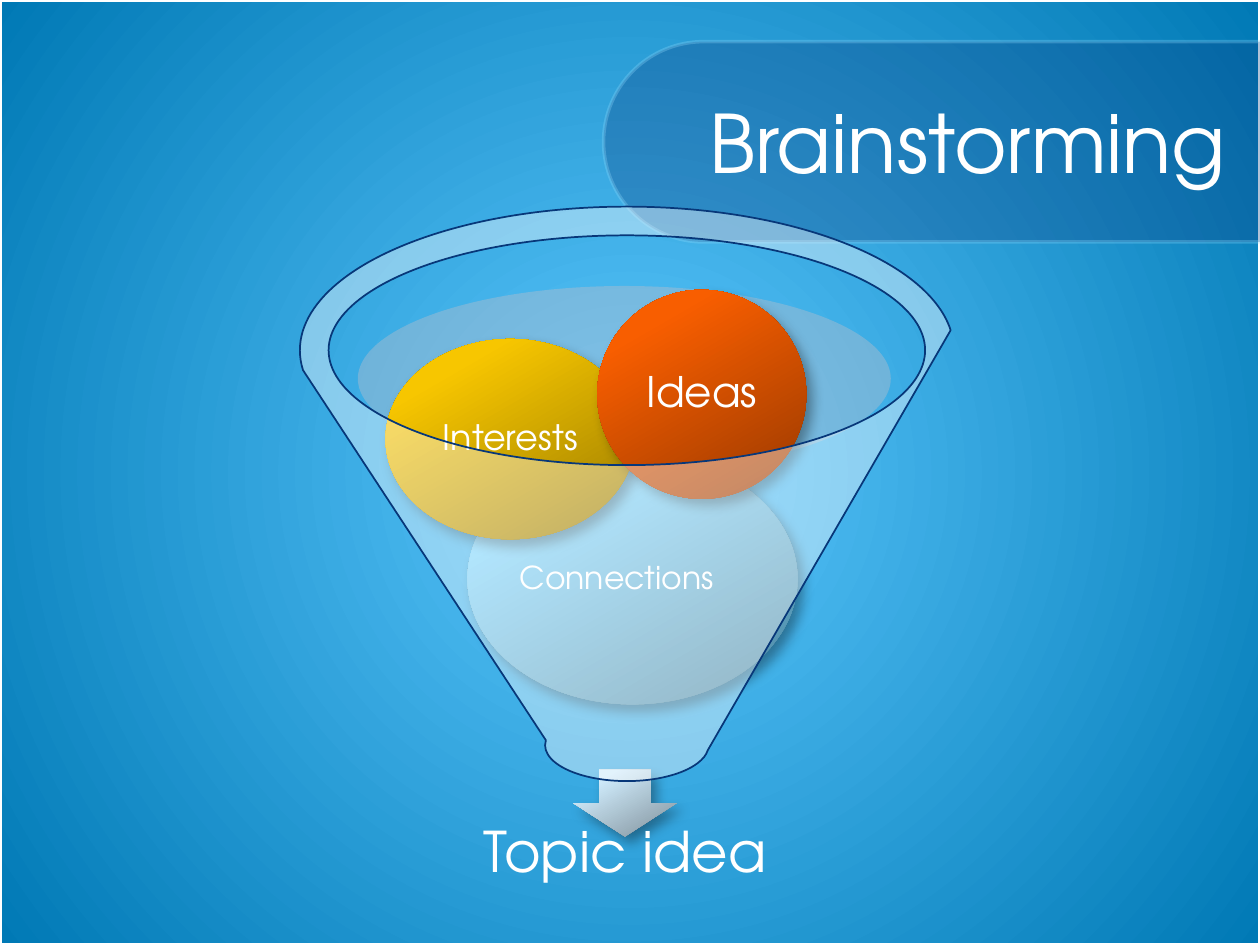
from lxml import etree
from pptx import Presentation
from pptx.dml.color import RGBColor
from pptx.enum import shapes, text
from pptx.oxml import parse_xml
from pptx.oxml.ns import nsdecls, qn
from pptx.util import Inches, Pt

FONT = "TeX Gyre Adventor"
WHITE = RGBColor(0xFF, 0xFF, 0xFF)
NAVY = RGBColor(0x07, 0x37, 0x79)
SKY = RGBColor(0x8F, 0xD9, 0xFB)
GREY = RGBColor(0xBD, 0xBF, 0xCB)
BLACK = RGBColor(0, 0, 0)
GLOW = [(0, RGBColor(0x5D, 0xC9, 0xFF)), (100, RGBColor(0x00, 0x79, 0xB5))]


def shaded(dark, bright, edge):
    return [(0, dark), (80, bright), (100, edge)]


SILVER = shaded(RGBColor(0x7F, 0x8F, 0x99), RGBColor(0xCF, 0xEB, 0xFB), RGBColor(0xCF, 0xEC, 0xFD))
BLUE = shaded(RGBColor(0x4B, 0x84, 0x9E), RGBColor(0x7F, 0xD7, 0xFF), RGBColor(0x81, 0xD7, 0xFF))
YELLOW = shaded(RGBColor(0x97, 0x79, 0x00), RGBColor(0xF7, 0xC6, 0x00), RGBColor(0xF8, 0xC7, 0x00))
ORANGE = shaded(RGBColor(0x98, 0x39, 0x00), RGBColor(0xF8, 0x5E, 0x00), RGBColor(0xF9, 0x5E, 0x00))

LEFT, CENTER, RIGHT = text.PP_ALIGN.LEFT, text.PP_ALIGN.CENTER, text.PP_ALIGN.RIGHT
# Balls from back to front: words, place within the funnel box, stops, text size, alignment
BALLS = [
    ("Connections", (1.33, 1.96, 2.62, 1.99), BLUE, 18, LEFT),
    ("Interests", (0.68, 1.05, 1.98, 1.59), YELLOW, 20, CENTER),
    ("Ideas", (2.36, 0.66, 1.66, 1.66), ORANGE, 24, CENTER),
]


def set_gradient(owner, stops, direction):
    """Swap the solid fill directly inside owner for a gradient."""
    marks = "".join(f'<a:gs pos="{pos * 1000}"><a:srgbClr val="{color}"/></a:gs>' for pos, color in stops)
    gradient = parse_xml(f'<a:gradFill {nsdecls("a")} rotWithShape="1"><a:gsLst>{marks}</a:gsLst>'
                         f"{direction}</a:gradFill>")
    owner.replace(owner.find(qn("a:solidFill")), gradient)


def set_alpha(shape, tag, percent):
    color = shape._element.spPr.find(tag).find(qn("a:srgbClr"))
    etree.SubElement(color, qn("a:alpha")).set("val", str(percent * 1000))


def add_shape(parts, kind, box, fill=None, alpha=None, line=None, width=1):
    shape = parts.add_shape(kind, *map(Inches, box))
    shape.shadow.inherit = False
    if fill is None:
        shape.fill.background()
    else:
        shape.fill.solid()
        shape.fill.fore_color.rgb = fill
        if alpha:
            set_alpha(shape, qn("a:solidFill"), alpha)
    if line is None:
        shape.line.fill.background()
    else:
        shape.line.color.rgb = line
        shape.line.width = Pt(width)
    return shape


def add_glossy(parts, kind, box, stops):
    """Add a shape lit from the upper left, with a soft shadow."""
    shape = add_shape(parts, kind, box, fill=WHITE)
    set_gradient(shape._element.spPr, stops, f'<a:lin ang="{240 * 60000}" scaled="0"/>')
    shadow = parse_xml(
        f'<a:outerShdw {nsdecls("a")} blurRad="{Pt(7)}" dist="{Pt(5)}" dir="{50 * 60000}" '
        f'rotWithShape="0"><a:srgbClr val="{BLACK}"><a:alpha val="35000"/></a:srgbClr></a:outerShdw>')
    shape._element.spPr.find(qn("a:effectLst")).append(shadow)
    return shape


def write(frame, words, size, align, inset, **spacing):
    margins = dict.fromkeys(("margin_left", "margin_top", "margin_right", "margin_bottom"), Inches(inset))
    settings = {"word_wrap": True, "auto_size": text.MSO_AUTO_SIZE.NONE,
                "vertical_anchor": text.MSO_ANCHOR.MIDDLE, **margins}
    for name, value in settings.items():
        setattr(frame, name, value)
    para = frame.paragraphs[0]
    for name, value in {"alignment": align, **spacing}.items():
        setattr(para, name, value)
    span = para.add_run()
    span.text = words
    for name, value in {"name": FONT, "size": Pt(size)}.items():
        setattr(span.font, name, value)
    span.font.color.rgb = WHITE


def write_label(frame, words, size, align, inset):
    write(frame, words, size, align, inset, line_spacing=0.9, space_after=Pt(0.35 * size))


def draw_backdrop(page, box):
    page.background.fill.solid()
    properties = page.element.find(".//" + qn("p:bgPr"))
    set_gradient(properties, GLOW, '<a:path path="circle"><a:fillToRect l="50000" t="50000" '
                                   'r="50000" b="50000"/></a:path>')
    add_shape(page.shapes, shapes.MSO_SHAPE.RECTANGLE, box, line=WHITE, width=2)


def draw_banner(page, box):
    """Fill box with a bar rounded on its left, and set the title on it."""
    left, top, width, height = box
    upright = (left + (width - height) / 2, top + (height - width) / 2, height, width)
    bar = add_shape(page.shapes, shapes.MSO_SHAPE.ROUND_2_SAME_RECTANGLE, upright, NAVY, 30, SKY, 2)
    bar.rotation = 270
    bar.adjustments[0], bar.adjustments[1] = 0.5, 0
    set_alpha(bar, qn("a:ln") + "/" + qn("a:solidFill"), 30)

    title = page.shapes.title
    title.left, title.top = Inches(left + 0.29), Inches(top)
    title.width, title.height = Inches(4.75), Inches(1.58)
    write(title.text_frame, "Brainstorming", 46, RIGHT, 0.1)
    page.shapes._spTree.append(title._element)


def draw_funnel(page, box):
    left, top, width, height = box
    parts = page.shapes.add_group_shape().shapes

    def place(x, y, w, h):
        return left + x, top + y, w, h

    add_shape(parts, shapes.MSO_SHAPE.OVAL, place(0.46, 0.63, 4.23, 1.47), GREY, 40)
    add_glossy(parts, shapes.MSO_SHAPE.DOWN_ARROW, place(2.17, 4.47, 0.82, 0.53), SILVER)
    result = parts.add_textbox(*map(Inches, place(0.61, 4.65, 3.94, 0.98)))
    write_label(result.text_frame, "Topic idea", 32, CENTER, 0.25)
    for words, spot, stops, size, align in BALLS:
        ball = add_glossy(parts, shapes.MSO_SHAPE.OVAL, place(*spot), stops)
        write_label(ball.text_frame, words, size, align, 0.03)
    add_shape(parts, shapes.MSO_SHAPE.FUNNEL, box, WHITE, 40, NAVY)


def main():
    deck = Presentation()
    deck.slide_width, deck.slide_height = Inches(10), Inches(7.5)
    page = deck.slides.add_slide(deck.slide_layouts[5])
    draw_backdrop(page, (0, 0, 10, 7.5))
    draw_banner(page, (4.79, 0.33, 5.22, 1.59))
    draw_funnel(page, (2.38, 1.64, 5.19, 4.56))
    deck.save("out.pptx")


if __name__ == "__main__":
    main()
